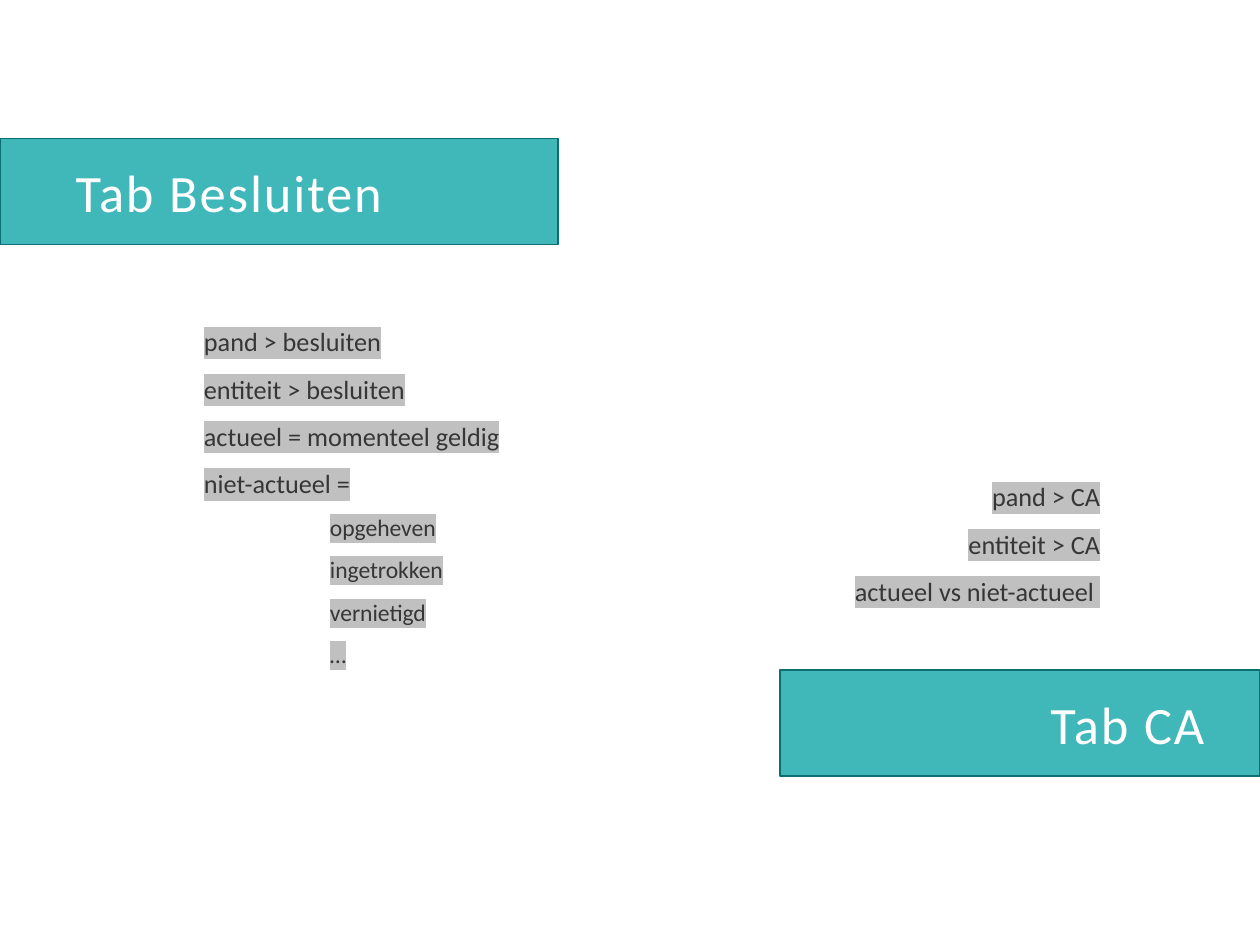
from dataclasses import dataclass

from lxml import etree
from pptx import Presentation
from pptx import util as u
from pptx.dml.color import RGBColor
from pptx.enum import shapes, text
from pptx.oxml import ns


@dataclass(frozen=True)
class Theme:
    """Colours, typeface and type sizes of the slide."""
    font: str = "Calibri"
    banner: str = "40B7B9"
    border: str = "0B6F71"
    heading: str = "FFFFFF"
    body: str = "373636"
    highlight: str = "C0C0C0"
    heading_size: float = 30
    item_size: float = 15
    subitem_size: float = 13.5


THEME = Theme()
LEFT, RIGHT = text.PP_ALIGN.LEFT, text.PP_ALIGN.RIGHT


def write_text(paragraph, content, *, size, color, align=LEFT, indent=0,
               line_spacing=None, tracking=None, highlight=None):
    """Write one formatted run into a paragraph."""
    paragraph.alignment = align
    if line_spacing:
        paragraph.line_spacing = line_spacing
    if indent:
        properties = paragraph._p.get_or_add_pPr()
        properties.set("marL", str(u.Inches(indent)))
        properties.set("indent", "0")
    run = paragraph.add_run()
    run.text = content
    run.font.size = u.Pt(size)
    run.font.color.rgb = RGBColor.from_string(color)
    properties = run._r.get_or_add_rPr()
    if tracking:
        properties.set("spc", str(round(tracking * 100)))
    if highlight:
        mark = etree.SubElement(properties, ns.qn("a:highlight"))
        etree.SubElement(mark, ns.qn("a:srgbClr"), val=highlight)
    run.font.name = THEME.font


def format_banner(shape, box, heading, *, align=LEFT, right_inset=0.1):
    """Place a shape as a filled banner with its heading."""
    shape.left, shape.top, shape.width, shape.height = map(u.Inches, box)
    shape.fill.solid()
    shape.fill.fore_color.rgb = RGBColor.from_string(THEME.banner)
    shape.line.color.rgb = RGBColor.from_string(THEME.border)
    shape.line.width = u.Pt(1)
    shape.shadow.inherit = False
    frame = shape.text_frame
    frame.word_wrap = True
    frame.auto_size = text.MSO_AUTO_SIZE.NONE
    frame.vertical_anchor = text.MSO_ANCHOR.MIDDLE
    frame.margin_right = u.Inches(right_inset)
    write_text(frame.paragraphs[0], heading, size=THEME.heading_size,
               color=THEME.heading, align=align, indent=0.5, tracking=1.1)


def add_list(slide, box, items, subitems=(), *, align=LEFT):
    """Add highlighted items followed by indented smaller ones."""
    frame = slide.shapes.add_textbox(*map(u.Inches, box)).text_frame
    frame.word_wrap = True
    frame.auto_size = text.MSO_AUTO_SIZE.SHAPE_TO_FIT_TEXT
    lines = [(item, THEME.item_size, 0) for item in items]
    lines += [(item, THEME.subitem_size, 1) for item in subitems]
    for index, (content, size, indent) in enumerate(lines):
        paragraph = frame.add_paragraph() if index else frame.paragraphs[0]
        write_text(paragraph, content, size=size, color=THEME.body,
                   align=align, indent=indent, line_spacing=1.5,
                   highlight=THEME.highlight)


def main():
    """Build and save the presentation."""
    presentation = Presentation()
    presentation.slide_width = u.Inches(10)
    presentation.slide_height = u.Inches(7.5)
    slide = presentation.slides.add_slide(presentation.slide_layouts[5])

    format_banner(slide.shapes.title, (0, 1.1, 4.43, 0.84), "Tab Besluiten")
    ca_box = (6.19, 5.32, 3.81, 0.84)
    ca_banner = slide.shapes.add_shape(
        shapes.MSO_SHAPE.RECTANGLE, *map(u.Inches, ca_box))
    format_banner(ca_banner, ca_box, "Tab CA", align=RIGHT, right_inset=0.44)

    add_list(slide, (1.52, 2.41, 3.58, 2.98),
             ["pand > besluiten", "entiteit > besluiten",
              "actueel = momenteel geldig", "niet-actueel ="],
             ["opgeheven", "ingetrokken", "vernietigd", "…"])
    add_list(slide, (5.25, 3.64, 3.58, 1.2),
             ["pand > CA", "entiteit > CA", "actueel vs niet-actueel "],
             align=RIGHT)
    presentation.save("out.pptx")


if __name__ == "__main__":
    main()
